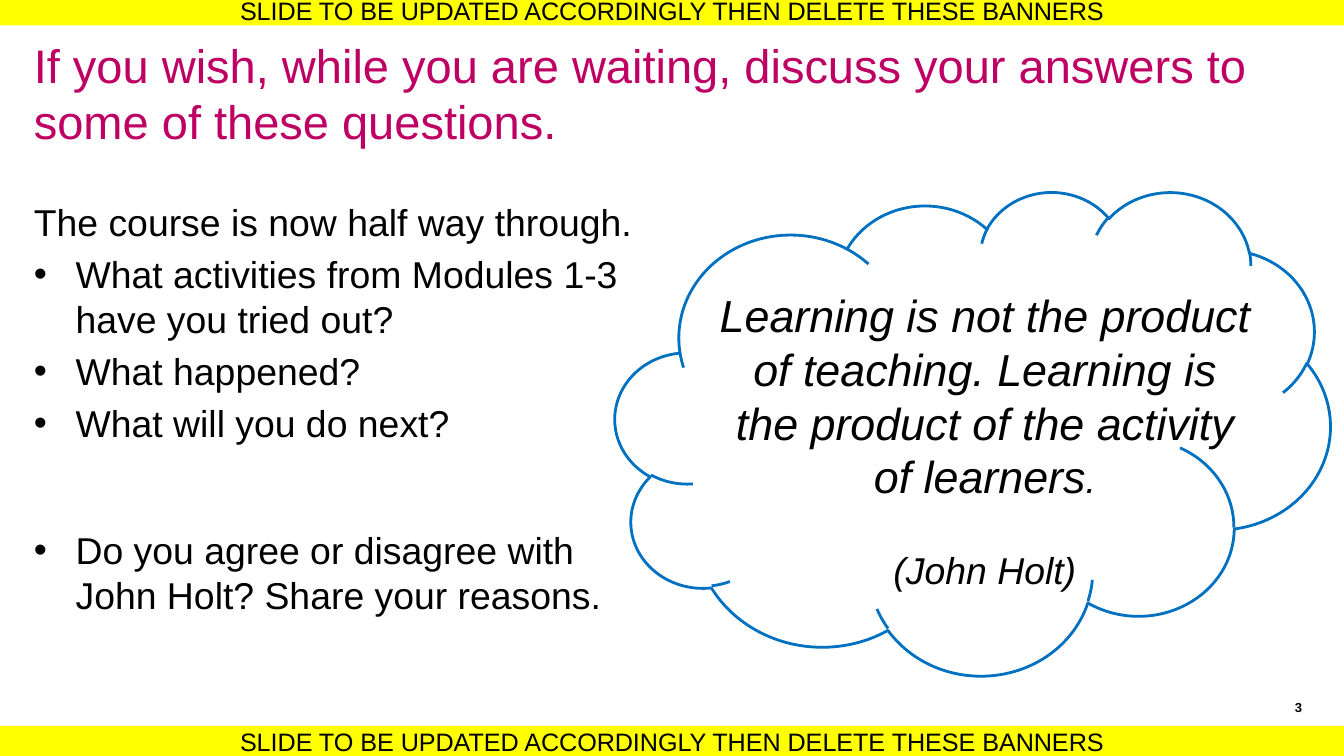
from lxml.etree import SubElement
from pptx import Presentation
from pptx.dml.color import RGBColor
from pptx.enum.shapes import MSO_SHAPE
from pptx.enum.text import MSO_ANCHOR, MSO_AUTO_SIZE, PP_ALIGN
from pptx.oxml.ns import qn
from pptx.util import Cm, Pt

COLORS = {"title": "BE0064", "text": "000000", "banner": "FFFF00", "cloud": "0070C0"}


def prepare_frame(shape, anchor=MSO_ANCHOR.TOP):
    frame = shape.text_frame
    frame.word_wrap = True
    frame.auto_size = MSO_AUTO_SIZE.NONE
    frame.vertical_anchor = anchor
    frame.margin_left = frame.margin_right = frame.margin_top = frame.margin_bottom = 0
    return frame


def format_paragraph(paragraph, size, color="text", alignment=PP_ALIGN.LEFT):
    paragraph.alignment = alignment
    paragraph.font.name = "Arial"
    paragraph.font.size = Pt(size)
    paragraph.font.color.rgb = RGBColor.from_string(COLORS[color])


presentation = Presentation()
presentation.slide_width = Cm(25.4)
presentation.slide_height = Cm(14.29)
slide = presentation.slides.add_slide(presentation.slide_layouts[5])

title = slide.shapes.title
title.left, title.top, title.width, title.height = Cm(0.64), Cm(0.69), Cm(23.44), Cm(1.93)
frame = prepare_frame(title)
frame.text = "If you wish, while you are waiting, discuss your answers to some of these questions."
format_paragraph(frame.paragraphs[0], 25.2, "title")

questions = slide.shapes.add_textbox(Cm(0.64), Cm(4.04), Cm(11.46), Cm(9.68))
frame = prepare_frame(questions)
introduction = frame.paragraphs[0]
introduction.text = "The course is now half way through."
format_paragraph(introduction, 20)
introduction.line_spacing = Pt(16)
introduction.space_before = Pt(4)
for text, space_before in [
    ("What activities from Modules 1-3 have you tried out?", 4),
    ("What happened?", 4),
    ("What will you do next?", 4),
    ("Do you agree or disagree with John Holt? Share your reasons.", 44),
]:
    paragraph = frame.add_paragraph()
    paragraph.text = text
    format_paragraph(paragraph, 20)
    paragraph.space_before = Pt(space_before)
    properties = paragraph._p.get_or_add_pPr()
    properties.set("marL", str(Cm(0.79)))
    properties.set("indent", str(-Cm(0.79)))
    SubElement(properties, qn("a:buFont"), typeface="Arial")
    SubElement(properties, qn("a:buChar"), char="•")

slide_number = slide.shapes.add_textbox(Cm(22.1), Cm(13.23), Cm(2.51), Cm(0.76))
paragraph = prepare_frame(slide_number).paragraphs[0]
paragraph.text = "3"
format_paragraph(paragraph, 7, alignment=PP_ALIGN.RIGHT)
paragraph.font.bold = True

for top in (-0.1, 13.72):
    banner = slide.shapes.add_shape(MSO_SHAPE.RECTANGLE, 0, Cm(top), Cm(25.4), Cm(0.58))
    banner.shadow.inherit = False
    banner.fill.solid()
    banner.fill.fore_color.rgb = RGBColor.from_string(COLORS["banner"])
    banner.line.fill.background()
    paragraph = prepare_frame(banner, MSO_ANCHOR.MIDDLE).paragraphs[0]
    paragraph.text = "SLIDE TO BE UPDATED ACCORDINGLY THEN DELETE THESE BANNERS"
    format_paragraph(paragraph, 13.5, alignment=PP_ALIGN.CENTER)

cloud = slide.shapes.add_shape(MSO_SHAPE.CLOUD, Cm(11.63), Cm(3.61), Cm(13.51), Cm(9.14))
cloud.shadow.inherit = False
cloud.fill.background()
cloud.line.color.rgb = RGBColor.from_string(COLORS["cloud"])
cloud.line.width = Pt(1.5)

quote = slide.shapes.add_textbox(Cm(13.56), Cm(5.44), Cm(10.11), Cm(5.82))
frame = prepare_frame(quote)
saying = frame.paragraphs[0]
saying.text = (
    "Learning is not the product of teaching. "
    "Learning is the product of the activity of learners"
)
format_paragraph(saying, 24, alignment=PP_ALIGN.CENTER)
saying.font.italic = True
full_stop = saying.add_run()
full_stop.text = "."
full_stop.font.size = Pt(20)
author = frame.add_paragraph()
author.text = "(John Holt)"
format_paragraph(author, 20, alignment=PP_ALIGN.CENTER)
author.font.italic = True
author.space_before = Pt(24)

presentation.save("out.pptx")
